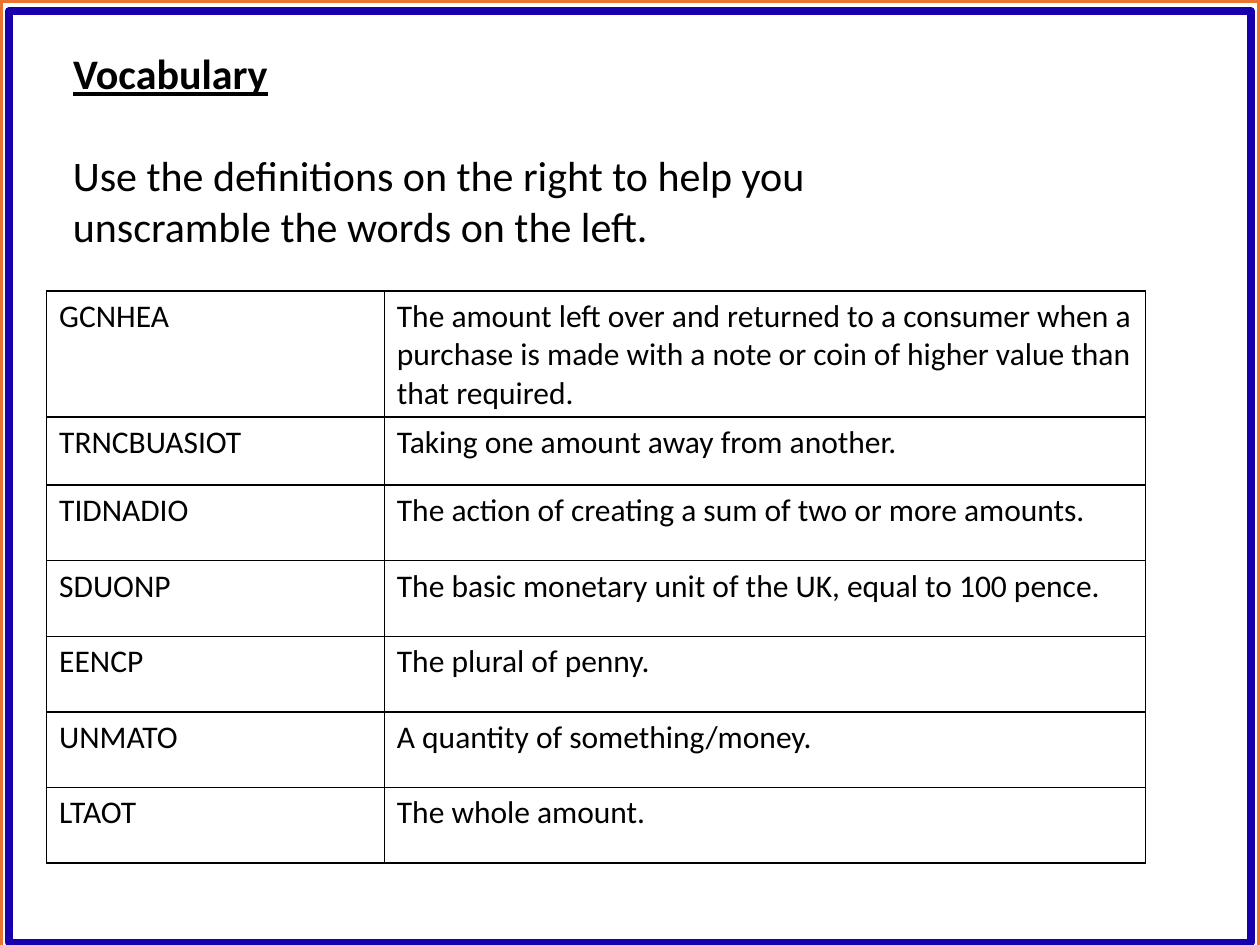
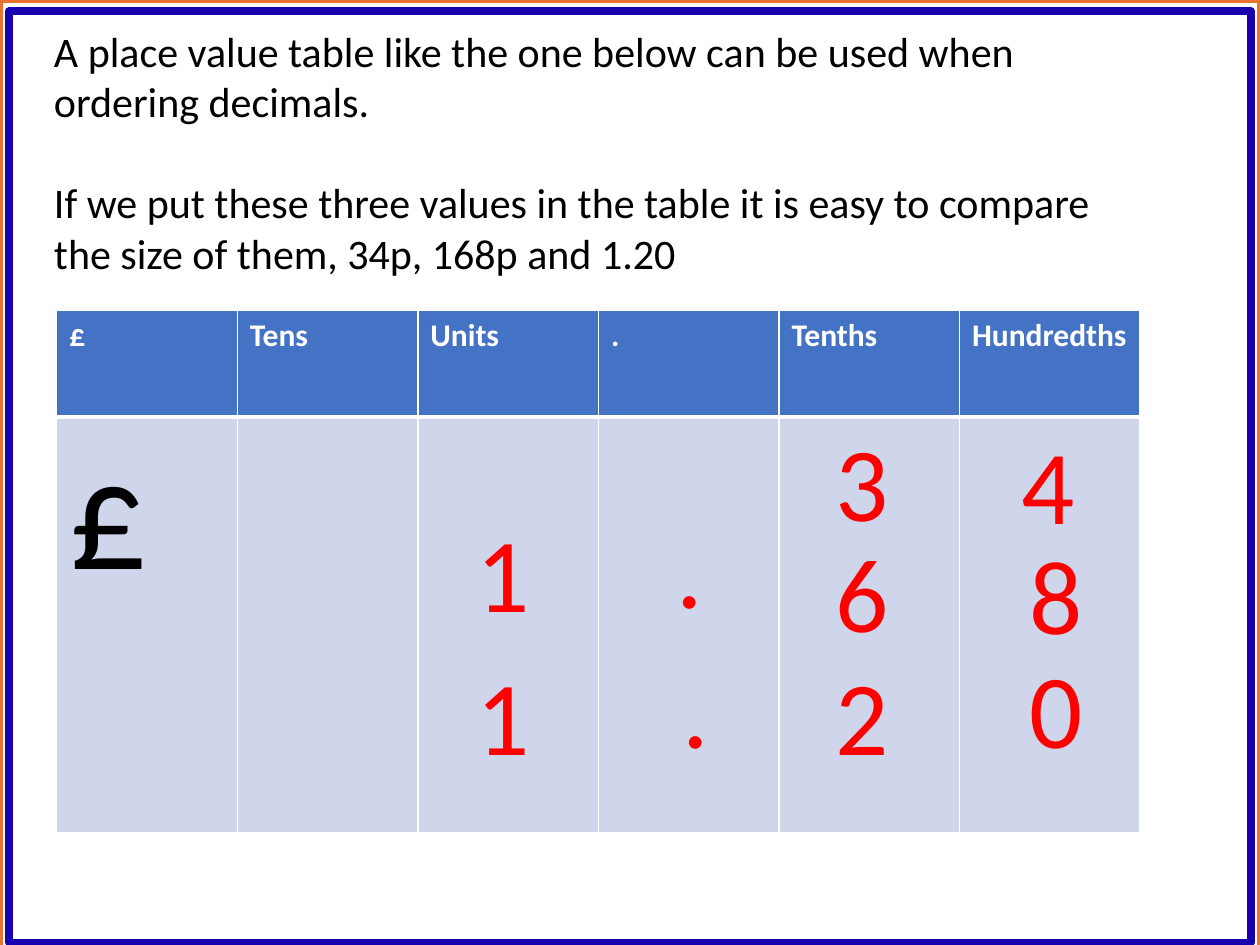
from pptx import Presentation
from pptx.dml.color import RGBColor
from pptx.enum.shapes import MSO_SHAPE
from pptx.enum.text import MSO_ANCHOR, PP_ALIGN
from pptx.oxml.ns import qn
from pptx.util import Inches, Pt
from lxml.etree import SubElement

FONT = "Calibri"
BLACK = RGBColor(0x00, 0x00, 0x00)
WHITE = RGBColor(0xFF, 0xFF, 0xFF)
RED = RGBColor(0xFF, 0x00, 0x00)
ORANGE = RGBColor(0xEB, 0x73, 0x31)
NAVY = RGBColor(0x19, 0x00, 0xAE)
HEADER_BLUE = RGBColor(0x44, 0x72, 0xC4)
PALE_BLUE = RGBColor(0xCF, 0xD5, 0xEA)

FRAMES = [  # box, colour, line width
    ((0, 0, 10, 7.57), ORANGE, 3),
    ((0.07, 0.09, 9.86, 7.39), NAVY, 4.5),
]

INSTRUCTION = ("Use the definitions on the right to help you "
               "unscramble the words on the left.")
VOCABULARY = [
    ("GCNHEA", "The amount left over and returned to a consumer when a purchase "
               "is made with a note or coin of higher value than that required."),
    ("TRNCBUASIOT", "Taking one amount away from another."),
    ("TIDNADIO", "The action of creating a sum of two or more amounts."),
    ("SDUONP", "The basic monetary unit of the UK, equal to 100 pence."),
    ("EENCP", "The plural of penny."),
    ("UNMATO", "A quantity of something/money."),
    ("LTAOT", "The whole amount."),
]
VOCABULARY_ROWS = [1, 0.54] + [0.6] * 5

PLACE_VALUE_INTRO = [
    "A place value table like the one below can be used when ordering decimals.",
    "If we put these three values in the table it is easy to compare "
    "the size of them, 34p, 168p and 1.20",
]
PLACES = ["£", "Tens", "Units", ".", "Tenths", "Hundredths"]
DIGITS = [  # one list per amount: digit, left, top
    [("3", 6.53, 3.26), ("4", 8.01, 3.28)],
    [("1", 3.68, 3.98), (".", 5.27, 3.95), ("6", 6.53, 4.14), ("8", 8.07, 4.15)],
    [("1", 3.68, 5.11), (".", 5.32, 5.06), ("2", 6.53, 5.11), ("0", 8.07, 5.06)],
]


def inches(box):
    return [Inches(v) for v in box]


def add_run(p, text, size, color=BLACK, bold=False, underline=False):
    r = p.add_run()
    r.text = text
    r.font.name = FONT
    r.font.size = Pt(size)
    r.font.color.rgb = color
    r.font.bold = bold
    r.font.underline = underline


def add_text(slide, box, paragraphs, size, color=BLACK):
    tf = slide.shapes.add_textbox(*inches(box)).text_frame
    tf.word_wrap = True
    for i, text in enumerate(paragraphs):
        p = tf.add_paragraph() if i else tf.paragraphs[0]
        if i:
            p.space_before = Pt(29)
        add_run(p, text, size, color)


def add_slide(prs, layout_name):
    slide = prs.slides.add_slide(prs.slide_layouts.get_by_name(layout_name))
    for box, color, width in FRAMES:
        sp = slide.shapes.add_shape(MSO_SHAPE.RECTANGLE, *inches(box))
        sp.shadow.inherit = False
        sp.fill.background()
        sp.line.color.rgb = color
        sp.line.width = Pt(width)
    return slide


def add_plain_table(slide, left, top, widths, heights):
    box = inches((left, top, sum(widths), sum(heights)))
    table = slide.shapes.add_table(len(heights), len(widths), *box).table
    table.first_row = table.horz_banding = False
    for column, width in zip(table.columns, widths):
        column.width = Inches(width)
    for row, height in zip(table.rows, heights):
        row.height = Inches(height)
    return table


def set_borders(cell, color, left=1, right=1, top=1, bottom=1):
    """Draw the four edges of a cell, widths in points; call before the fill."""
    tc_pr = cell._tc.get_or_add_tcPr()
    for side, width in zip("LRTB", (left, right, top, bottom)):
        ln = SubElement(tc_pr, qn(f"a:ln{side}"), w=str(Pt(width)))
        fill = SubElement(ln, qn("a:solidFill"))
        SubElement(fill, qn("a:srgbClr"), val=str(color))


def build_vocabulary(prs):
    slide = add_slide(prs, "Title Only")
    title = slide.shapes.title
    title.left, title.top, title.width, title.height = inches((0.48, 0.33, 7.04, 0.5))
    title.text_frame.vertical_anchor = MSO_ANCHOR.TOP
    p = title.text_frame.paragraphs[0]
    p.alignment = PP_ALIGN.LEFT
    add_run(p, "Vocabulary", 24, bold=True, underline=True)
    add_text(slide, (0.48, 1.14, 7.04, 0.91), [INSTRUCTION], 24)

    table = add_plain_table(slide, 0.37, 2.31, [2.68, 6.04], VOCABULARY_ROWS)
    for r, entry in enumerate(VOCABULARY):
        for c, text in enumerate(entry):
            cell = table.cell(r, c)
            set_borders(cell, BLACK)
            cell.fill.background()
            add_run(cell.text_frame.paragraphs[0], text, 18)


def build_place_value(prs):
    slide = add_slide(prs, "Blank")
    widths = [8.6 / len(PLACES)] * len(PLACES)
    table = add_plain_table(slide, 0.45, 2.46, widths, [0.85, 3.3])
    for c, place in enumerate(PLACES):
        head, body = table.cell(0, c), table.cell(1, c)
        set_borders(head, WHITE, bottom=3)
        set_borders(body, WHITE, top=3)
        for cell, color in ((head, HEADER_BLUE), (body, PALE_BLUE)):
            cell.fill.solid()
            cell.fill.fore_color.rgb = color
        add_run(head.text_frame.paragraphs[0], place, 18, WHITE, bold=True)
    add_run(table.cell(1, 0).text_frame.paragraphs[0], "£", 88)

    add_text(slide, (0.33, 0.15, 8.72, 2.12), PLACE_VALUE_INTRO, 24)
    for amount in DIGITS:
        for digit, left, top in amount:
            add_text(slide, (left, top, 0.79, 1.11), [digit], 60, RED)


def main():
    prs = Presentation()
    prs.slide_width, prs.slide_height = Inches(10), Inches(7.5)
    build_vocabulary(prs)
    build_place_value(prs)
    prs.save("out.pptx")


if __name__ == "__main__":
    main()
